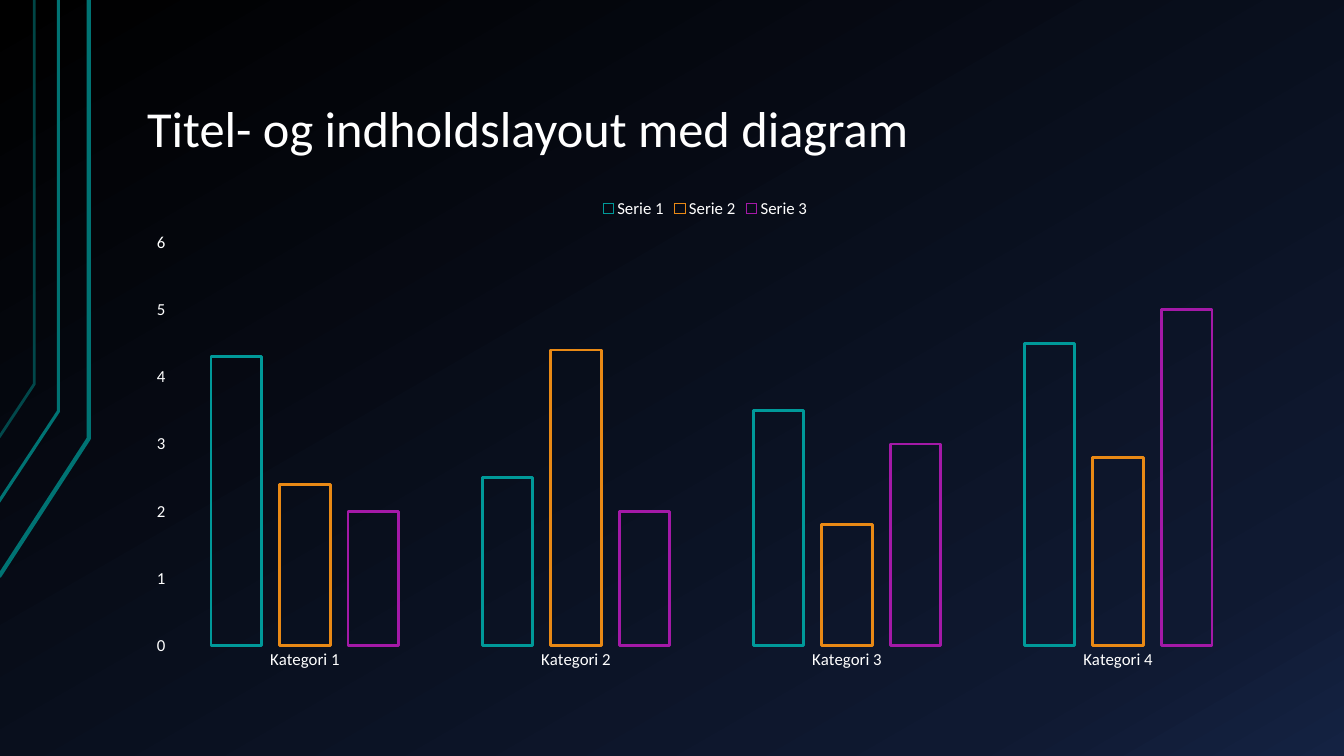
from copy import deepcopy

from lxml.etree import SubElement
from pptx import Presentation
from pptx.chart.data import CategoryChartData
from pptx.dml.color import RGBColor
from pptx.enum.chart import XL_CHART_TYPE, XL_LEGEND_POSITION, XL_TICK_MARK
from pptx.enum.text import MSO_ANCHOR
from pptx.oxml.ns import qn
from pptx.util import Inches, Pt

BLACK = RGBColor(0x00, 0x00, 0x00)
NAVY = RGBColor(0x0F, 0x19, 0x31)
BLUE = RGBColor(0x14, 0x22, 0x42)
WHITE = RGBColor(0xFF, 0xFF, 0xFF)
DARK_TEAL = RGBColor(0x00, 0x73, 0x73)
TEAL = RGBColor(0x00, 0x99, 0x99)
ORANGE = RGBColor(0xE9, 0x89, 0x15)
PURPLE = RGBColor(0xA4, 0x19, 0xA7)

# points, line width in points, opacity in percent
CORNER_LINES = [
    ([(-0.01, 5.72), (0.88, 4.35), (0.88, 0)], 3, 100),
    ([(-0.02, 4.99), (0.58, 4.08), (0.58, 0)], 2.25, 100),
    ([(-0.01, 4.34), (0.34, 3.81), (0.34, 0)], 2, 60),
]
CATEGORIES = [f"Kategori {n}" for n in range(1, 5)]
SERIES = [
    ("Serie 1", (4.3, 2.5, 3.5, 4.5), TEAL),
    ("Serie 2", (2.4, 4.4, 1.8, 2.8), ORANGE),
    ("Serie 3", (2, 2, 3, 5), PURPLE),
]


class SlideBuilder:
    font_name = "Calibri"
    text_color = WHITE

    def __init__(self, s):
        self.s = s

    def style_font(self, font, size):
        font.name = self.font_name
        font.size = Pt(size)
        font.color.rgb = self.text_color

    def background(self, stops, angle):
        """Fill the background with (position, colour) stops, angle clockwise."""
        fill = self.s.background.fill
        fill.gradient()
        fill.gradient_angle = 360 - angle
        first = self.s.background._cSld.find(".//" + qn("a:gs"))
        while len(first.getparent()) < len(stops):
            first.addnext(deepcopy(first))
        for stop, (position, color) in zip(fill.gradient_stops, stops):
            stop.color.rgb = color
            stop.position = position

    def open_line(self, points, width, opacity):
        start, *rest = [(Inches(x), Inches(y)) for x, y in points]
        builder = self.s.shapes.build_freeform(*start)
        builder.add_line_segments(rest, close=False)
        sp = builder.convert_to_shape()
        sp.shadow.inherit = False
        sp.fill.background()
        sp.line.color.rgb = DARK_TEAL
        sp.line.width = Pt(width)
        if opacity < 100:
            color = sp.line._ln.find(".//" + qn("a:srgbClr"))
            SubElement(color, qn("a:alpha"), val=str(opacity * 1000))

    def title(self, text, left, top, width, height):
        sp = self.s.shapes.add_textbox(
            Inches(left), Inches(top), Inches(width), Inches(height))
        tf = sp.text_frame
        tf.word_wrap = True
        tf.vertical_anchor = MSO_ANCHOR.BOTTOM
        tf.margin_left = tf.margin_right = Inches(0.13)
        tf.margin_top = tf.margin_bottom = Inches(0.07)
        p = tf.paragraphs[0]
        p.line_spacing = 0.9
        r = p.add_run()
        r.text = text
        self.style_font(r.font, 36)

    def column_chart(self, categories, series, left, top, width, height):
        data = CategoryChartData()
        data.categories = categories
        for name, values, _ in series:
            data.add_series(name, values)
        chart = self.s.shapes.add_chart(
            XL_CHART_TYPE.COLUMN_CLUSTERED, Inches(left), Inches(top),
            Inches(width), Inches(height), data).chart
        self.style_font(chart.font, 10)
        chart.has_title = False
        chart.has_legend = True
        chart.legend.position = XL_LEGEND_POSITION.TOP
        chart.legend.include_in_layout = False
        self.style_font(chart.legend.font, 12)

        for axis in (chart.category_axis, chart.value_axis):
            axis.has_major_gridlines = False
            axis.major_tick_mark = axis.minor_tick_mark = XL_TICK_MARK.NONE
            axis.format.line.fill.background()
            self.style_font(axis.tick_labels.font, 12)
        chart.value_axis.minimum_scale = 0
        chart.value_axis.maximum_scale = 6
        chart.value_axis.major_unit = 1

        plot = chart.plots[0]
        plot.vary_by_categories = False
        plot.gap_width = 164
        plot.overlap = -35
        for columns, (_, _, color) in zip(plot.series, series):
            columns.invert_if_negative = False
            columns.format.fill.background()
            columns.format.line.color.rgb = color
            columns.format.line.width = Pt(2)


def main():
    prs = Presentation()
    prs.slide_width = Inches(13.33)
    prs.slide_height = Inches(7.5)
    slide = SlideBuilder(prs.slides.add_slide(prs.slide_layouts[6]))
    slide.background([(0, BLACK), (0.85, NAVY), (1, BLUE)], 60)
    for points, width, opacity in CORNER_LINES:
        slide.open_line(points, width, opacity)
    slide.title("Titel- og indholdslayout med diagram", 1.33, 0.3, 11.33, 1.34)
    slide.column_chart(CATEGORIES, SERIES, 1.33, 1.86, 11.33, 4.88)
    prs.save("out.pptx")


if __name__ == "__main__":
    main()
